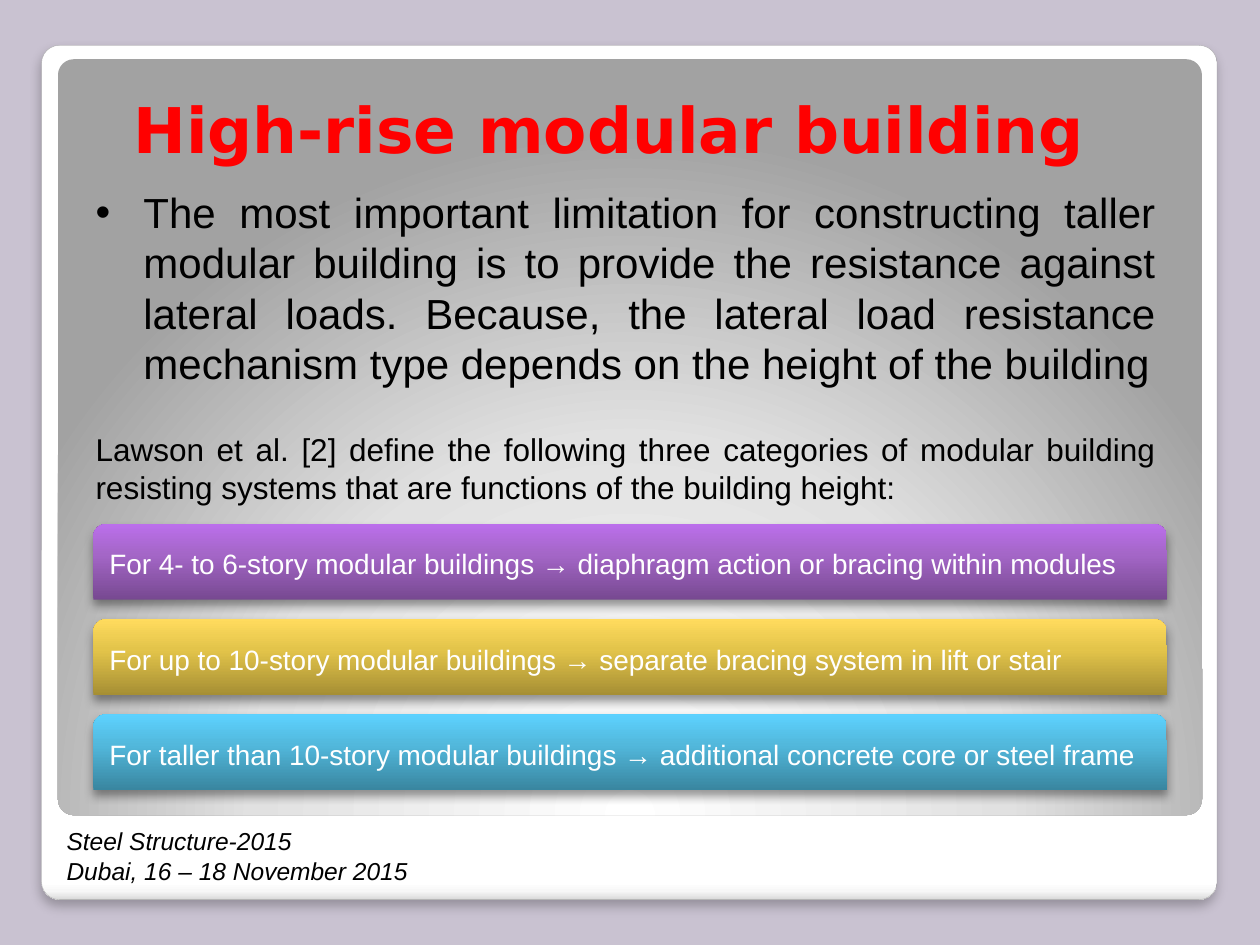
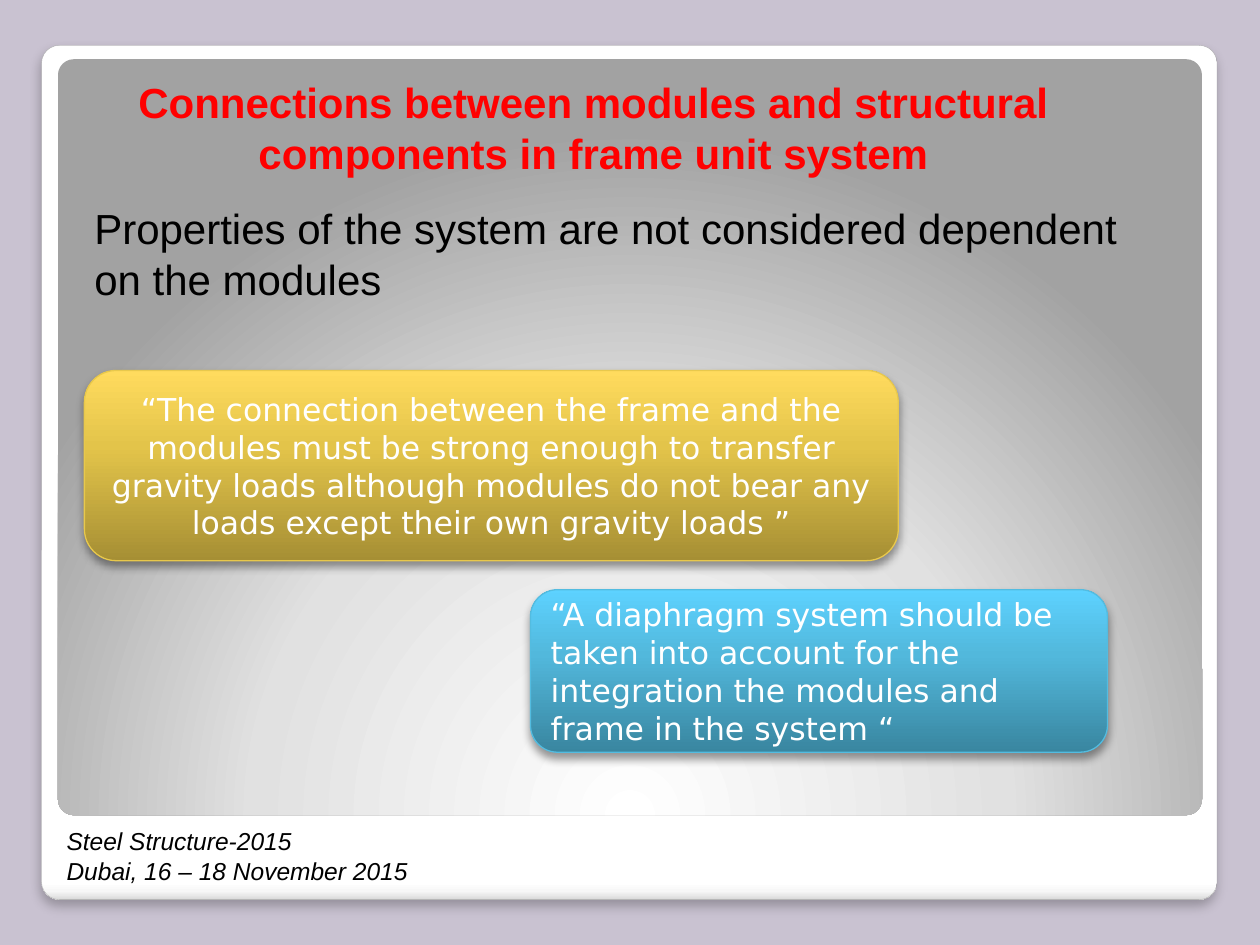
from lxml.etree import SubElement
from pptx import Presentation
from pptx.dml.color import RGBColor
from pptx.enum.shapes import MSO_SHAPE
from pptx.enum.text import MSO_ANCHOR, PP_ALIGN
from pptx.oxml.ns import qn
from pptx.util import Inches, Pt

BODY_FONT, DISPLAY_FONT = "Arial", "DejaVu Sans"
BACKDROP, RED, BLACK, WHITE = "C9C2D1", "FF0000", "000000", "FFFFFF"
CARD_STOPS = [(0, WHITE), (98, WHITE), (99, "F7F7F7"), (100, "DADADA")]
PANEL_STOPS = [(0, WHITE), (55, "E1E1E1"), (100, "A2A2A2")]
PURPLE = [(0, "774991"), (60, "A466C7"), (100, "BB6FEB")]
GOLD = [(0, "A68F34"), (60, "E3C44A"), (100, "FFDB5E")]
BLUE = [(0, "3986A0"), (60, "52B8DC"), (100, "5DD2FF")]
FOOTER = ["Steel Structure-2015", "Dubai, 16 – 18 November 2015"]


def rgb(hex_code):
    return RGBColor.from_string(hex_code)


class Deck:
    """Slides on a grid of 100 columns by 75 rows; places are (column, row, columns, rows)."""

    COLUMNS, ROWS = 100, 75

    def __init__(self):
        self.file = Presentation()
        self.file.slide_width, self.file.slide_height = Inches(10), Inches(7.5)
        self.column = self.file.slide_width / self.COLUMNS
        self.row = self.file.slide_height / self.ROWS
        self.slide = None

    def place(self, cells):
        units = (self.column, self.row) * 2
        return [round(cell * unit) for cell, unit in zip(cells, units)]

    def new_slide(self):
        self.slide = self.file.slides.add_slide(self.file.slide_layouts[6])
        background = self.slide.background.fill
        background.solid()
        background.fore_color.rgb = rgb(BACKDROP)
        self.panel((3.3, 3.6, 93.3, 67.8), CARD_STOPS, angle=90, corner=0.021,
                   outline=("A4A4A4", 0.16), shadow=(25, 6, 4))
        self.panel((4.6, 4.7, 90.8, 60), PANEL_STOPS, corner=0.021)
        self.text((4.3, 65.1, 50, 5.7), FOOTER, 14, italic=True)

    def gradient(self, shape, stops, angle):
        """Linear gradient at the angle, or a glow from the bottom centre without one."""
        geometry = shape._element.spPr.find(qn("a:prstGeom"))
        fill = geometry.makeelement(qn("a:gradFill"), {"rotWithShape": "1"})
        geometry.addnext(fill)
        stop_list = SubElement(fill, qn("a:gsLst"))
        for share, color in stops:
            stop = SubElement(stop_list, qn("a:gs"), pos=str(share * 1000))
            SubElement(stop, qn("a:srgbClr"), val=color)
        if angle is not None:
            SubElement(fill, qn("a:lin"), ang=str(angle * 60000), scaled="0")
        else:
            glow = SubElement(fill, qn("a:path"), path="circle")
            SubElement(glow, qn("a:fillToRect"), l="50000", t="175000", r="50000", b="-75000")

    def drop_shadow(self, shape, opacity, blur, distance):
        effects = shape._element.spPr.find(qn("a:effectLst"))
        shadow = SubElement(effects, qn("a:outerShdw"), blurRad=str(Pt(blur)),
                            dist=str(Pt(distance)), dir=str(90 * 60000), rotWithShape="0")
        color = SubElement(shadow, qn("a:srgbClr"), val=BLACK)
        SubElement(color, qn("a:alpha"), val=str(opacity * 1000))

    def panel(self, cells, stops, angle=None, corner=None, outline=None, shadow=None,
              outer=MSO_SHAPE.ROUNDED_RECTANGLE):
        shape = self.slide.shapes.add_shape(outer, *self.place(cells))
        self.gradient(shape, stops, angle)
        if corner:
            shape.adjustments[0] = corner
        if outline:
            color, width = outline
            shape.line.color.rgb = rgb(color)
            shape.line.width = Pt(width)
        else:
            shape.line.fill.background()
        shape.shadow.inherit = False
        if shadow:
            self.drop_shadow(shape, *shadow)
        return shape

    def set_text(self, shape, lines, size, font=BODY_FONT, color=BLACK, bold=False,
                 italic=False, align=PP_ALIGN.LEFT, anchor=MSO_ANCHOR.TOP):
        frame = shape.text_frame
        frame.word_wrap = True
        frame.vertical_anchor = anchor
        frame.text = "\n".join(lines)
        for paragraph in frame.paragraphs:
            paragraph.alignment = align
            style = paragraph.font
            style.name, style.size, style.color.rgb = font, Pt(size), rgb(color)
            style.bold, style.italic = bold, italic
        return frame.paragraphs

    def text(self, cells, lines, size, **style):
        box = self.slide.shapes.add_textbox(*self.place(cells))
        return self.set_text(box, lines, size, **style)

    def title(self, cells, wording, size, **style):
        self.text(cells, [wording], size, color=RED, bold=True,
                  align=PP_ALIGN.CENTER, **style)

    def bullet(self, paragraph, indent):
        properties = paragraph._p.get_or_add_pPr()
        properties.set("marL", str(Inches(indent)))
        properties.set("indent", str(-Inches(indent)))
        bullet_font = properties.makeelement(qn("a:buFont"), {"typeface": BODY_FONT})
        bullet_mark = properties.makeelement(qn("a:buChar"), {"char": "•"})
        properties.insert(0, bullet_font)
        bullet_font.addnext(bullet_mark)

    def glossy(self, cells, stops, wording, size, font=BODY_FONT, align=PP_ALIGN.LEFT, **look):
        shape = self.panel(cells, stops, angle=270, shadow=(40, 5.2, 3), **look)
        self.set_text(shape, [wording], size, font=font, color=WHITE, align=align,
                      anchor=MSO_ANCHOR.MIDDLE)

    def band(self, cells, stops, wording):
        self.glossy(cells, stops, wording, 16, outer=MSO_SHAPE.ROUND_2_SAME_RECTANGLE)

    def quote(self, cells, stops, edge, wording, align=PP_ALIGN.LEFT):
        self.glossy(cells, stops, wording, 18, font=DISPLAY_FONT, align=align,
                    outline=(edge, 0.75))


def high_rise(deck):
    deck.new_slide()
    deck.title((4.8, 2.2, 88.8, 11.5), "High-rise modular building ", 36,
               font=DISPLAY_FONT, anchor=MSO_ANCHOR.BOTTOM)
    limitation, categories = deck.text((6.6, 14.3, 86.1, 26.6), [
        "The most important limitation for constructing taller modular building is to "
        "provide the resistance against lateral loads. Because, the lateral load "
        "resistance mechanism type depends on the height of the building",
        "Lawson et al. [2] define the following three categories of modular building "
        "resisting systems that are functions of the building height:",
    ], 24, align=PP_ALIGN.JUSTIFY)
    deck.bullet(limitation, 0.38)
    categories.font.size = Pt(18)
    categories.space_before = Pt(24)

    systems = [
        (PURPLE, "For 4- to 6-story modular buildings → diaphragm action or bracing within modules"),
        (GOLD, "For up to 10-story modular buildings → separate bracing system in lift or stair"),
        (BLUE, "For taller than 10-story modular buildings → additional concrete core or steel frame"),
    ]
    for index, (stops, wording) in enumerate(systems):
        deck.band((7.4, 41.6 + 7.55 * index, 85.2, 6), stops, wording)


def connections(deck):
    deck.new_slide()
    deck.title((8.8, 5.6, 76.6, 9.1),
               "Connections between modules and structural components in frame unit system", 24)
    deck.text((6.5, 15.6, 87.5, 9.1),
              ["Properties of the system are not considered dependent on the modules"], 24)
    deck.quote((42.1, 46.8, 45.8, 12.9), BLUE, "53BCE0",
               "“A diaphragm system should be taken into account for the integration "
               "the modules and frame in the system “")
    deck.quote((6.7, 29.4, 64.6, 15.1), GOLD, "E8C84C",
               "“The connection between the frame and the modules must be strong enough "
               "to transfer gravity loads although modules do not bear any loads except "
               "their own gravity loads ”", align=PP_ALIGN.CENTER)


def main():
    deck = Deck()
    high_rise(deck)
    connections(deck)
    deck.file.save("out.pptx")


if __name__ == "__main__":
    main()
